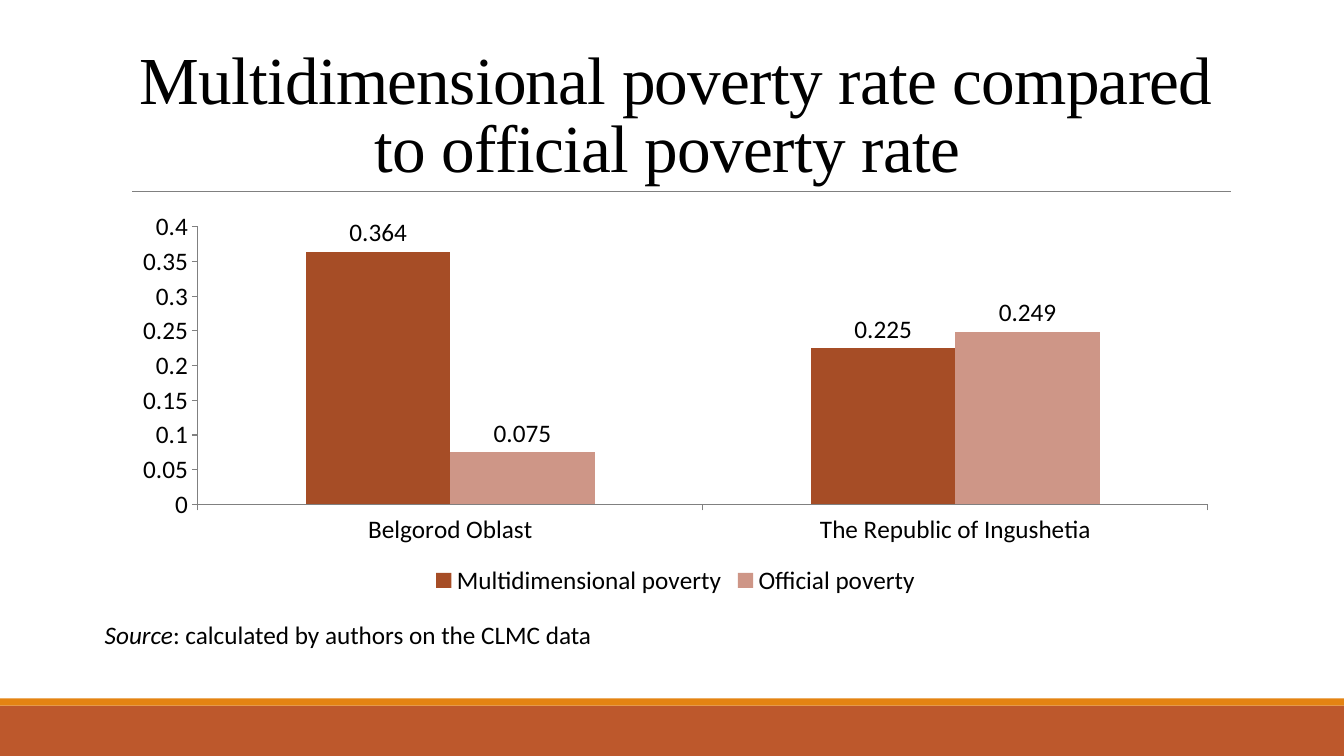
from pptx import Presentation
from pptx.chart.data import CategoryChartData
from pptx.dml.color import RGBColor
from pptx.enum.chart import XL_CHART_TYPE, XL_LABEL_POSITION, XL_LEGEND_POSITION, XL_TICK_MARK
from pptx.enum.shapes import MSO_CONNECTOR, MSO_SHAPE
from pptx.enum.text import MSO_ANCHOR, PP_ALIGN
from pptx.oxml.ns import qn
from pptx.util import Inches, Pt
from lxml import etree

COLUMN = XL_CHART_TYPE.COLUMN_CLUSTERED
ABOVE = XL_LABEL_POSITION.OUTSIDE_END
BOTTOM = XL_LEGEND_POSITION.BOTTOM
OUTSIDE = XL_TICK_MARK.OUTSIDE
STRAIGHT = MSO_CONNECTOR.STRAIGHT
RECT = MSO_SHAPE.RECTANGLE
LOW, TOP = MSO_ANCHOR.BOTTOM, MSO_ANCHOR.TOP
LEFT, CENTER = PP_ALIGN.LEFT, PP_ALIGN.CENTER


def color(code):
    return RGBColor.from_string(code)


class Page:
    font = "Calibri"
    size = 18
    ink = "000000"
    gray = "808080"

    def __init__(self, slide):
        self.slide = slide
        self.shapes = slide.shapes

    def style(self, font, name=None, size=None):
        font.name = name or self.font
        font.size = Pt(size or self.size)
        font.color.rgb = color(self.ink)

    def band(self, top, height, fill):
        band = self.shapes.add_shape(RECT, 0, Inches(top), Inches(13.33), Inches(height))
        band.shadow.inherit = False
        band.fill.solid()
        band.fill.fore_color.rgb = color(fill)
        band.line.fill.background()

    def rule(self, left, right, top):
        rule = self.shapes.add_connector(
            STRAIGHT, Inches(left), Inches(top), Inches(right), Inches(top))
        rule.line.color.rgb = color(self.gray)
        rule.line.width = Pt(0.5)
        etree.SubElement(rule._element.spPr, qn("a:effectLst"))

    def text(self, box, runs, name=None, size=None, align=LEFT, anchor=TOP, lead=1.0, track=0):
        frame = self.shapes.add_textbox(*map(Inches, box)).text_frame
        frame.word_wrap = True
        frame.vertical_anchor = anchor
        para = frame.paragraphs[0]
        para.alignment = align
        para.line_spacing = lead
        self.style(para.font, name, size)
        for words, slant in runs:
            run = para.add_run()
            run.text = words
            if slant:
                run.font.italic = True
            if track:
                run.font._element.set("spc", str(int(track * 100)))

    def chart(self, box, cats, series):
        data = CategoryChartData()
        data.categories = cats
        for name, values, _ in series:
            data.add_series(name, values)
        chart = self.shapes.add_chart(COLUMN, *map(Inches, box), data).chart
        self.style(chart.font)
        chart.has_title = False
        chart.has_legend = True
        chart.legend.position = BOTTOM
        chart.legend.include_in_layout = False
        self.style(chart.legend.font)
        for axis in (chart.category_axis, chart.value_axis):
            axis.has_major_gridlines = False
            axis.major_tick_mark = OUTSIDE
            axis.format.line.color.rgb = color(self.gray)
            self.style(axis.tick_labels.font)
        scale = chart.value_axis
        scale.minimum_scale, scale.maximum_scale, scale.major_unit = 0, 0.4, 0.05
        plot = chart.plots[0]
        plot.gap_width, plot.overlap = 150, 0
        plot.vary_by_categories = False
        plot.has_data_labels = True
        labels = plot.data_labels
        labels.show_value = True
        labels.position = ABOVE
        self.style(labels.font)
        for bars, (_, _, fill) in zip(plot.series, series):
            bars.format.fill.solid()
            bars.format.fill.fore_color.rgb = color(fill)


def main():
    deck = Presentation()
    deck.slide_width, deck.slide_height = Inches(13.33), Inches(7.5)
    page = Page(deck.slides.add_slide(deck.slide_layouts[6]))
    page.band(7, 0.5, "BD582C")
    page.band(6.93, 0.07, "E48312")
    page.rule(1.31, 12.21, 1.9)
    page.text((1.2, 0.31, 11, 1.59),
              [("Multidimensional poverty rate compared to official poverty rate ", False)],
              "Times New Roman", 48, CENTER, LOW, 0.85, -0.5)
    page.chart((1.2, 2.02, 11, 3.94),
               ["Belgorod Oblast", "The Republic of Ingushetia"],
               [("Multidimensional poverty", (0.364, 0.225), "A64D26"),
                ("Official poverty", (0.075, 0.249), "CE9687")])
    page.text((0.94, 6.09, 6.38, 0.4),
              [("Source", True), (": calculated by authors on the CLMC data", False)])
    deck.save("out.pptx")


if __name__ == "__main__":
    main()
